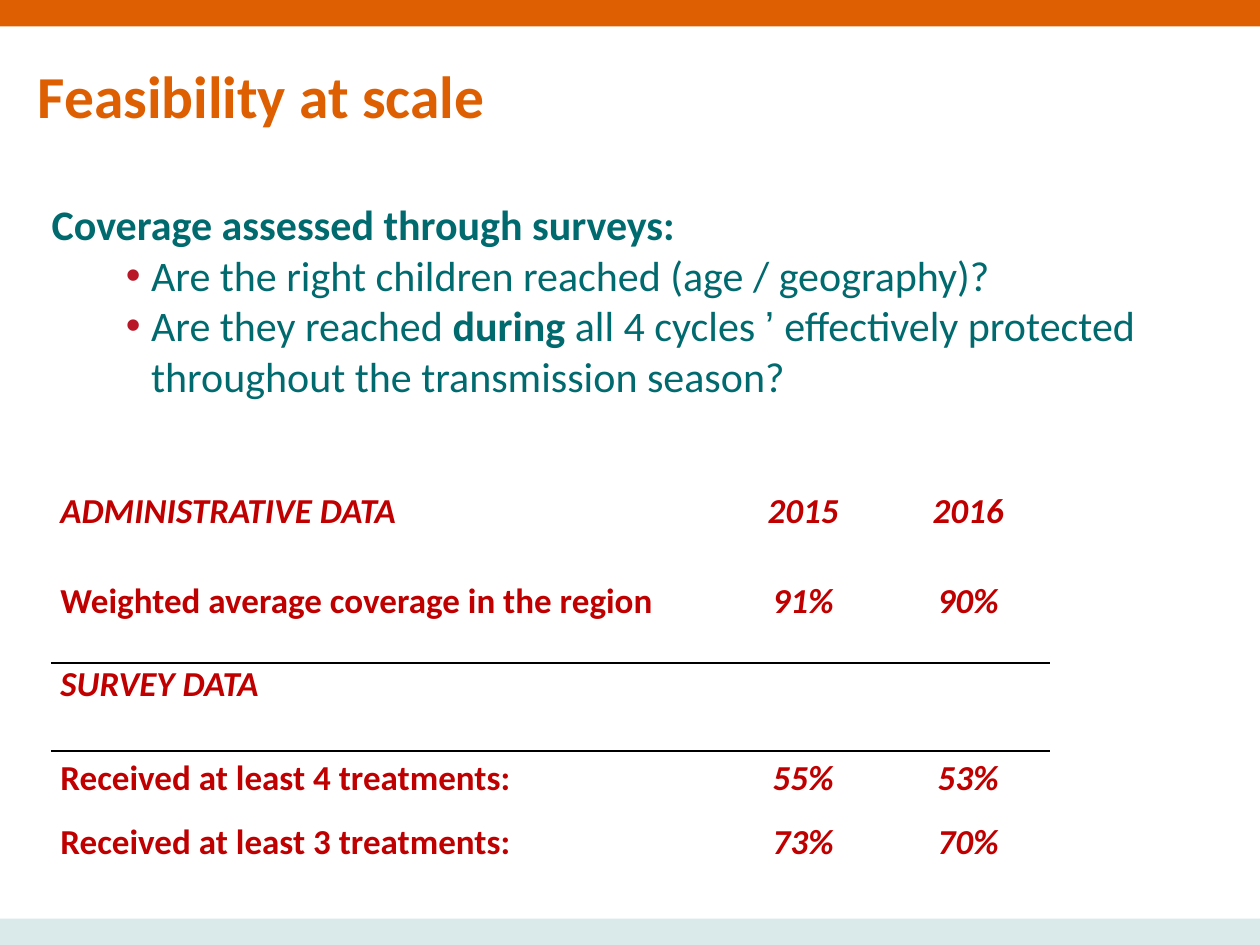
from lxml import etree
from pptx import Presentation
from pptx.dml.color import RGBColor
from pptx.enum import shapes, text
from pptx.oxml.ns import qn
from pptx.util import Inches, Pt

COLORS = {"orange": "DD5F01", "mist": "DAEAEA", "teal": "006A6F",
          "bullet": "B91728", "red": "C00000", "rule": "000000"}

TITLE = "Feasibility at scale"
LEAD = "Coverage assessed through surveys:"
# Each question is a list of (text, run format)
QUESTIONS = [
    [("Are the right children reached (age / geography)?", {})],
    [("Are they reached ", {}), ("during", {"bold": True}), (" all 4 cycles ", {}),
     ("’ ", {"font": "Arial"}),
     ("effectively protected throughout the transmission season?", {})],
]
# (row height, cell texts)
COVERAGE = [
    (0.71, ("ADMINISTRATIVE DATA", "2015", "2016")),
    (0.51, ("Weighted average coverage in the region", "91%", "90%")),
    (0.2, ("", "", "")),
    (0.7, ("SURVEY DATA", "", "")),
    (0.51, ("Received at least 4 treatments:", "55%", "53%")),
    (0.51, ("Received at least 3 treatments:", "73%", "70%")),
]
COLUMN_WIDTHS = (5.3, 1.33, 1.29)
SPACER_ROW = 2
SURVEY_ROW = 3
BAND_HEIGHT = 0.21


def rgb(name):
    return RGBColor.from_string(COLORS[name])


def add_text(paragraph, content, *, size, color, bold=False, italic=False, font="Calibri"):
    run = paragraph.add_run()
    run.text = content
    run.font.size = Pt(size)
    run.font.name = font
    run.font.bold = bold
    run.font.italic = italic
    run.font.color.rgb = rgb(color)


def add_band(slide, top, color):
    band = slide.shapes.add_shape(shapes.MSO_SHAPE.RECTANGLE, 0, Inches(top),
                                  Inches(10), Inches(BAND_HEIGHT))
    band.shadow.inherit = False
    band.fill.solid()
    band.fill.fore_color.rgb = rgb(color)
    band.line.fill.background()


def add_frame(slide, box, inset=0):
    frame = slide.shapes.add_textbox(*map(Inches, box)).text_frame
    frame.word_wrap = True
    frame.margin_left = frame.margin_right = 0
    frame.margin_top = frame.margin_bottom = Inches(inset)
    return frame


def add_bullet(paragraph):
    props = paragraph._p.get_or_add_pPr()
    props.set("marL", str(Inches(0.79)))
    props.set("indent", str(Inches(-0.2)))
    color = etree.SubElement(props, qn("a:buClr"))
    etree.SubElement(color, qn("a:srgbClr"), val=COLORS["bullet"])
    etree.SubElement(props, qn("a:buFont"), typeface="Arial")
    etree.SubElement(props, qn("a:buChar"), char="•")


def add_rule(cell, edge):
    """Draw a border on one edge of a cell: lnT or lnB."""
    line = etree.Element(qn("a:" + edge), w=str(Pt(1.5)))
    fill = etree.SubElement(line, qn("a:solidFill"))
    etree.SubElement(fill, qn("a:srgbClr"), val=COLORS["rule"])
    cell._tc.get_or_add_tcPr().insert(0, line)


def add_coverage_table(slide):
    table = slide.shapes.add_table(
        len(COVERAGE), len(COLUMN_WIDTHS), Inches(0.41), Inches(3.84),
        Inches(sum(COLUMN_WIDTHS)), Inches(sum(height for height, _ in COVERAGE))).table
    table.first_row = table.horz_banding = False
    for column, width in zip(table.columns, COLUMN_WIDTHS):
        column.width = Inches(width)
    for r, (height, labels) in enumerate(COVERAGE):
        table.rows[r].height = Inches(height)
        for c, label in enumerate(labels):
            cell = table.cell(r, c)
            cell.fill.background()
            cell.margin_left = cell.margin_right = Inches(0.07)
            cell.margin_top = cell.margin_bottom = 0
            paragraph = cell.text_frame.paragraphs[0]
            if c:
                paragraph.alignment = text.PP_ALIGN.CENTER
            if r == SURVEY_ROW:
                paragraph.space_before = Pt(12)
                add_rule(cell, "lnT")
            elif r == SPACER_ROW:
                add_rule(cell, "lnB")
            else:
                paragraph.line_spacing = 1.15
            if label:
                add_text(paragraph, label, size=20, color="red", bold=True,
                         italic=c > 0 or label.isupper())
            else:
                etree.SubElement(paragraph._p, qn("a:endParaRPr"), sz="1000")


def main():
    deck = Presentation()
    deck.slide_width, deck.slide_height = Inches(10), Inches(7.5)
    slide = deck.slides.add_slide(deck.slide_layouts[6])

    add_band(slide, 0, "orange")
    add_band(slide, 7.5 - BAND_HEIGHT, "mist")

    title = add_frame(slide, (0.3, 0.31, 9.62, 0.73))
    title.vertical_anchor = text.MSO_ANCHOR.BOTTOM
    title.paragraphs[0].line_spacing = 0.9
    add_text(title.paragraphs[0], TITLE, size=34, color="orange", bold=True)

    body = add_frame(slide, (0.41, 1.53, 9.06, 1.54), inset=0.05)
    body.paragraphs[0].space_before = Pt(12)
    add_text(body.paragraphs[0], LEAD, size=24, color="teal", bold=True)
    for question in QUESTIONS:
        paragraph = body.add_paragraph()
        paragraph.level = 4
        add_bullet(paragraph)
        for content, style in question:
            add_text(paragraph, content, size=24, color="teal", **style)

    add_coverage_table(slide)
    deck.save("out.pptx")


if __name__ == "__main__":
    main()
